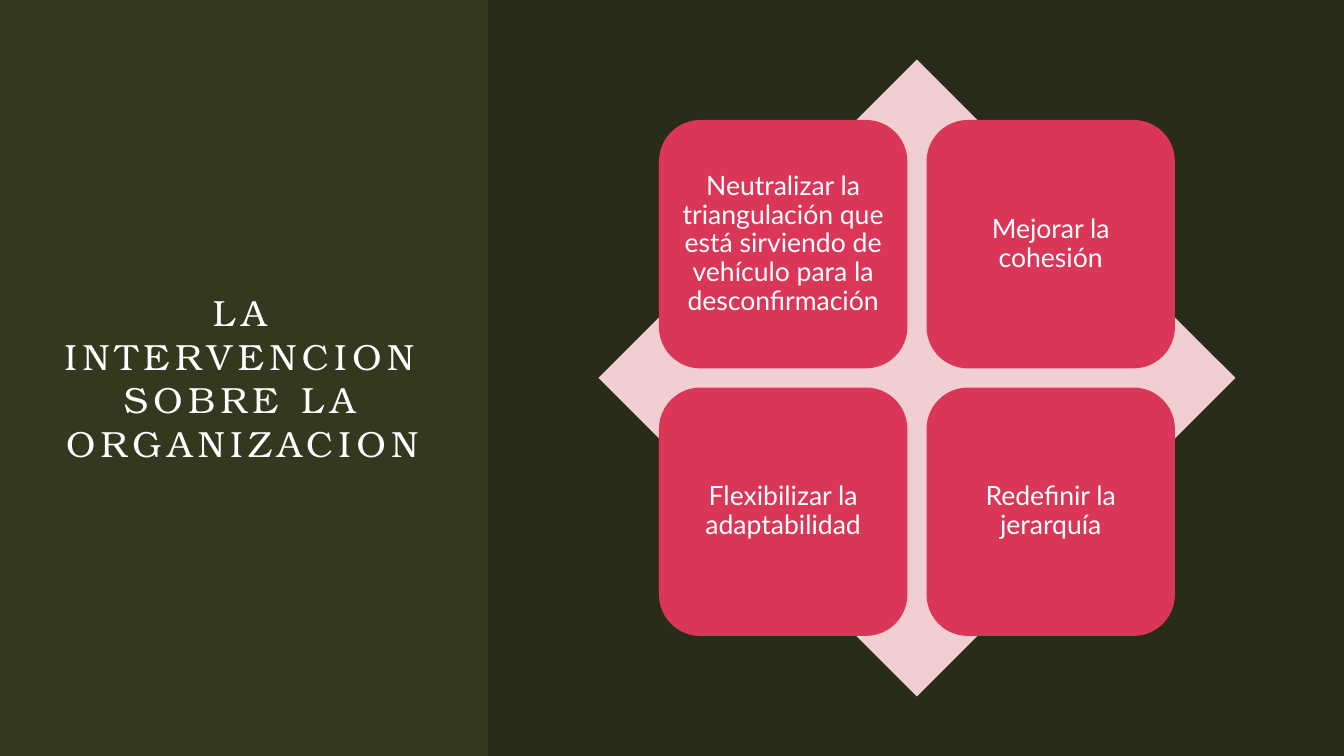
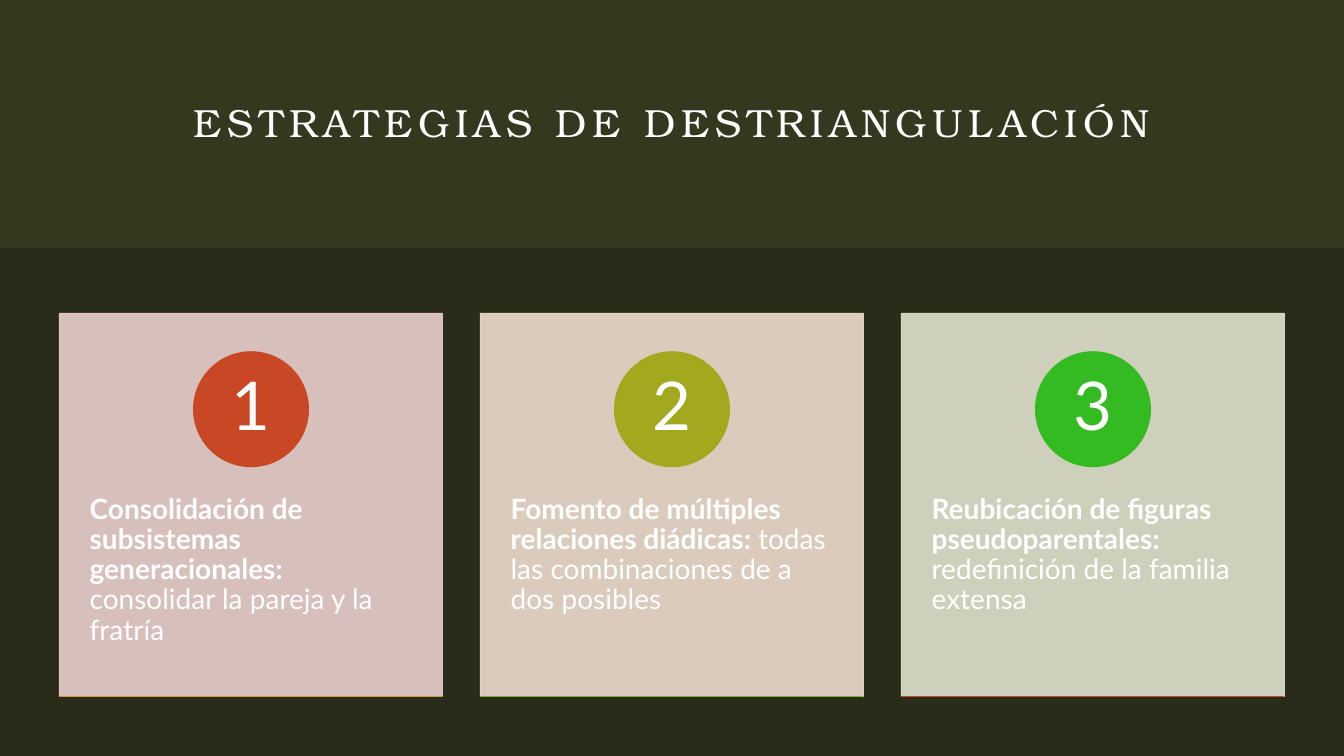
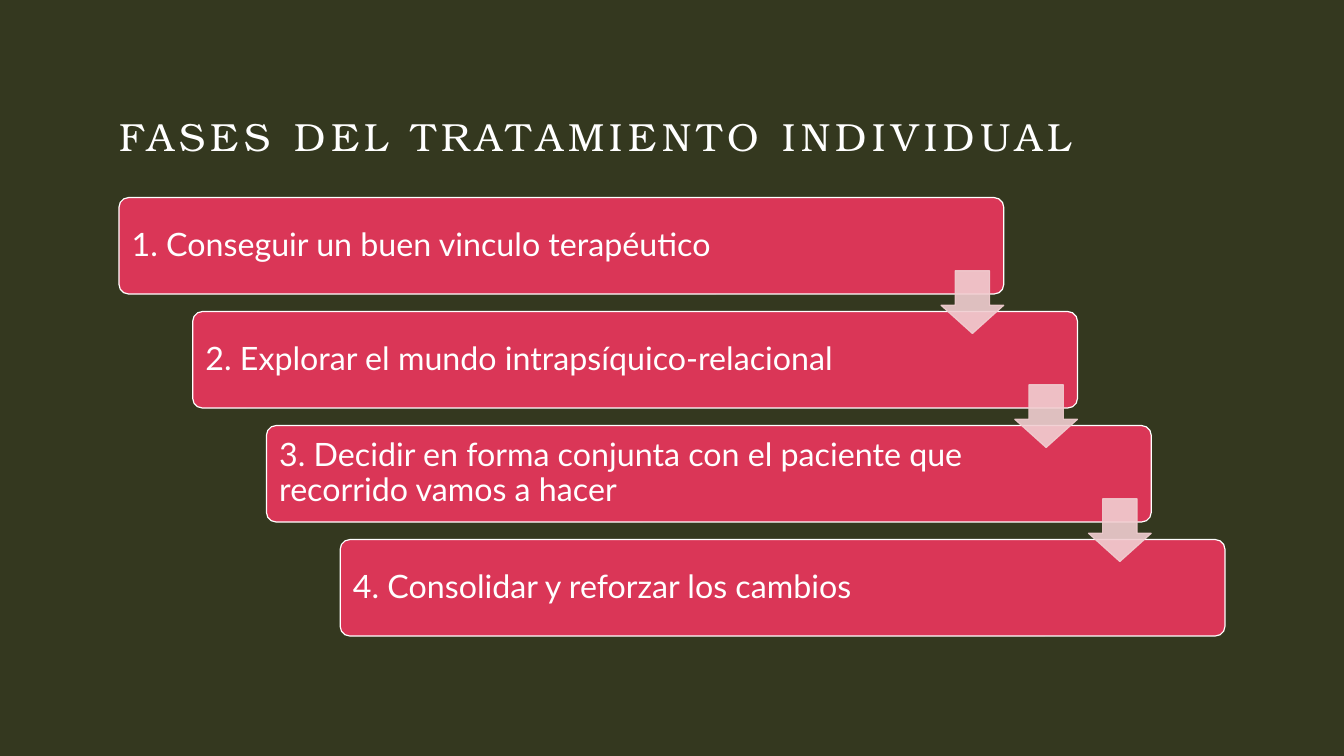
import pptx
import pptx.dml.color
import pptx.enum.shapes
import pptx.enum.text
import pptx.oxml.ns
import pptx.util
from lxml import etree

Pt = pptx.util.Pt
RGBColor = pptx.dml.color.RGBColor
Shape = pptx.enum.shapes.MSO_SHAPE
Align = pptx.enum.text.PP_ALIGN
Anchor = pptx.enum.text.MSO_ANCHOR
qn = pptx.oxml.ns.qn

OLIVE = RGBColor(0x34, 0x38, 0x1F)
BLACK = RGBColor(0, 0, 0)
WHITE = RGBColor(0xFF, 0xFF, 0xFF)
CRIMSON = RGBColor(0xDA, 0x36, 0x57)
BLUSH = RGBColor(0xF1, 0xCE, 0xD1)
ROSE = RGBColor(0xEB, 0xCF, 0xCD)
PEACH = RGBColor(0xEF, 0xDD, 0xCE)
SAGE = RGBColor(0xE0, 0xE2, 0xCD)
RUST = RGBColor(0xC8, 0x47, 0x24)
MOSS = RGBColor(0xA2, 0xA9, 0x1E)
GREEN = RGBColor(0x34, 0xBB, 0x22)
AMBER = RGBColor(0xD3, 0x98, 0x34)
LEAF = RGBColor(0x76, 0xB5, 0x2D)

BODY_FONT = "Lato"
TITLE_FONT = "TeX Gyre Bonum"
PAGE_WIDTH, PAGE_HEIGHT = 960, 540
MARGIN = 42.5


def add_page(deck):
    page = deck.slides.add_slide(deck.slide_layouts[6])
    page.background.fill.solid()
    page.background.fill.fore_color.rgb = OLIVE
    return page


def set_opacity(shape, percent):
    for color in shape.element.spPr.iter(qn("a:srgbClr")):
        etree.SubElement(color, qn("a:alpha")).set("val", str(percent * 1000))


def add_block(page, kind, box, fill, line=None, line_width=0.75, opacity=100):
    shape = page.shapes.add_shape(kind, *map(Pt, box))
    shape.shadow.inherit = False
    shape.fill.solid()
    shape.fill.fore_color.rgb = fill
    if line is None:
        shape.line.fill.background()
    else:
        shape.line.color.rgb = line
        shape.line.width = Pt(line_width)
    if opacity < 100:
        set_opacity(shape, opacity)
    return shape


def write(shape, spans, size, align, anchor, insets, font=BODY_FONT, spacing=0.9):
    frame = shape.text_frame
    frame.word_wrap = True
    frame.vertical_anchor = anchor
    (frame.margin_left, frame.margin_top,
     frame.margin_right, frame.margin_bottom) = map(Pt, insets)
    para = frame.paragraphs[0]
    para.alignment = align
    para.line_spacing = spacing
    para.font.name = font
    para.font.size = Pt(size)
    para.font.color.rgb = WHITE
    for text, bold in spans:
        span = para.add_run()
        span.text = text
        if bold:
            span.font.bold = True
    return para


def add_title(page, box, text, size=28, align=Align.CENTER, anchor=Anchor.MIDDLE):
    title = page.shapes.add_textbox(*map(Pt, box))
    para = write(title, [(text, False)], size, align, anchor, (0, 0, 0, 0),
                 TITLE_FONT, 1.0)
    para.runs[0].font._element.set("spc", "400")


def add_shade(page, left, top):
    add_block(page, Shape.RECTANGLE,
              (left, top, PAGE_WIDTH - left, PAGE_HEIGHT - top), BLACK, opacity=20)


def add_matrix(page, box, texts):
    left, top, side, _ = box
    add_block(page, Shape.DIAMOND, box, BLUSH)
    tile = 0.39 * side
    inset = 0.095 * side
    pitch = side - 2 * inset - tile
    for index, text in enumerate(texts):
        row, column = divmod(index, 2)
        tile_box = (left + inset + column * pitch, top + inset + row * pitch, tile, tile)
        shape = add_block(page, Shape.ROUNDED_RECTANGLE, tile_box, CRIMSON)
        write(shape, [(text, False)], 19, Align.CENTER, Anchor.MIDDLE, (5.8,) * 4)


def add_card(page, box, number, heading, detail, fill, badge_color, rule_color):
    left, top, width, height = box
    card = add_block(page, Shape.RECTANGLE, box, fill, fill, opacity=90)
    write(card, [(heading, True), (detail, False)], 20, Align.LEFT, Anchor.TOP,
          (21.6, 129.6, 21.6, 0))
    badge_side = 0.3 * height
    badge_box = (left + (width - badge_side) / 2, top + 0.1 * height,
                 badge_side, badge_side)
    badge = add_block(page, Shape.OVAL, badge_box, badge_color, badge_color)
    write(badge, [(str(number), False)], 48, Align.CENTER, Anchor.MIDDLE,
          (6.4, 0.8, 6.4, 0.8))
    bottom = top + height
    rule = page.shapes.add_connector(
        pptx.enum.shapes.MSO_CONNECTOR.STRAIGHT,
        *map(Pt, (left, bottom, left + width, bottom)))
    rule.line.color.rgb = rule_color
    rule.line.width = Pt(0.75)
    etree.SubElement(rule._element.spPr, qn("a:effectLst"))


def add_cards(page, box, cards):
    left, top, width, side = box
    pitch = (width - side) / (len(cards) - 1)
    for index, card in enumerate(cards):
        add_card(page, (left + index * pitch, top, side, side), index + 1, *card)


def add_staircase(page, box, texts):
    left, top, width, height = box
    step_width, step_height = 0.8 * width, 0.22 * height
    shift = (width - step_width) / (len(texts) - 1)
    pitch = (height - step_height) / (len(texts) - 1)
    for index, text in enumerate(texts):
        step_box = (left + index * shift, top + index * pitch, step_width, step_height)
        step = add_block(page, Shape.ROUNDED_RECTANGLE, step_box, CRIMSON, WHITE, 0.85)
        step.adjustments[0] = 0.1
        write(step, [(text, False)], 23, Align.LEFT, Anchor.MIDDLE,
              (7.2, 7.2, 104, 7.2))
    arrow_side = 0.65 * step_height
    for index in range(len(texts) - 1):
        arrow_box = (left + index * shift + step_width - arrow_side,
                     top + index * pitch + 0.76 * step_height, arrow_side, arrow_side)
        arrow = add_block(page, Shape.DOWN_ARROW, arrow_box, BLUSH, BLUSH, 0.85, 90)
        arrow.adjustments[0] = 0.55
        arrow.adjustments[1] = 0.45


def build_organization(deck):
    page = add_page(deck)
    add_title(page, (MARGIN, 85, 261.4, 369.4),
              "LA INTERVENCION SOBRE LA ORGANIZACION", 26)
    add_shade(page, 348.5, 0)
    add_matrix(page, (427.5, MARGIN, 455, 455), [
        "Neutralizar la triangulación que está sirviendo de vehículo "
        "para la desconfirmación",
        "Mejorar la cohesión",
        "Flexibilizar la adaptabilidad",
        "Redefinir la jerarquía",
    ])


def build_strategies(deck):
    page = add_page(deck)
    add_title(page, (85, MARGIN, 790, 88.6), "ESTRATEGIAS DE DESTRIANGULACIÓN")
    add_shade(page, 0, 177.1)
    add_cards(page, (MARGIN, 223.9, PAGE_WIDTH - 2 * MARGIN, 273.6), [
        ("Consolidación de subsistemas generacionales: ",
         "consolidar la pareja y la fratría", ROSE, RUST, AMBER),
        ("Fomento de múltiples relaciones diádicas: ",
         "todas las combinaciones de a dos posibles", PEACH, MOSS, LEAF),
        ("Reubicación de figuras pseudoparentales: ",
         "redefinición de la familia extensa", SAGE, GREEN, RUST),
    ])


def build_phases(deck):
    page = add_page(deck)
    add_title(page, (85, 80, 790, 51.8), "FASES DEL TRATAMIENTO INDIVIDUAL",
              align=Align.LEFT, anchor=Anchor.TOP)
    add_staircase(page, (85, 141.1, 790, 313.2), [
        "1. Conseguir un buen vinculo terapéutico",
        "2. Explorar el mundo intrapsíquico-relacional",
        "3. Decidir en forma conjunta con el paciente que recorrido vamos a hacer",
        "4. Consolidar y reforzar los cambios",
    ])


def main():
    deck = pptx.Presentation()
    deck.slide_width = Pt(PAGE_WIDTH)
    deck.slide_height = Pt(PAGE_HEIGHT)
    build_organization(deck)
    build_strategies(deck)
    build_phases(deck)
    deck.save("out.pptx")


if __name__ == "__main__":
    main()
